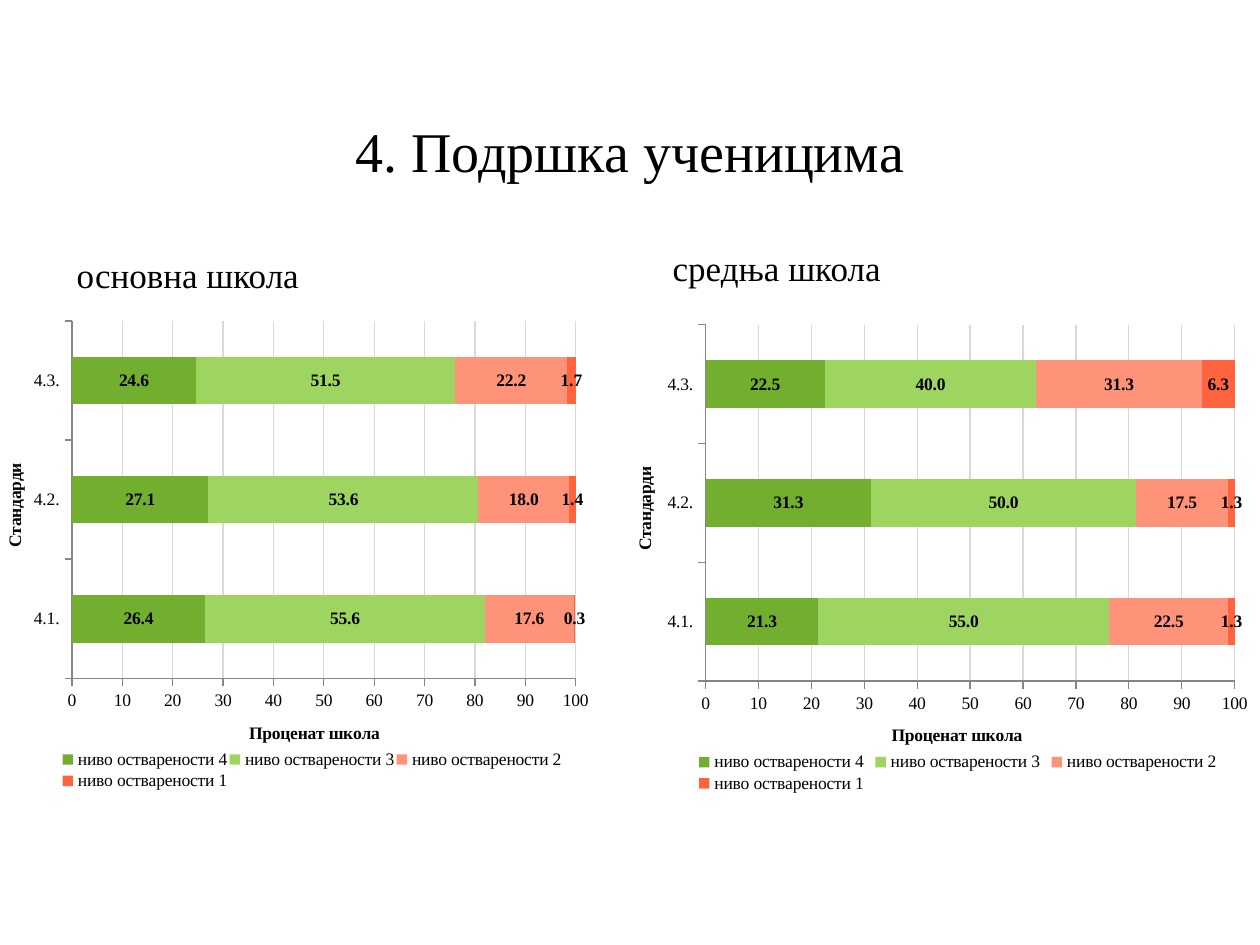
from lxml.etree import SubElement
from pptx import Presentation
from pptx.chart.data import CategoryChartData
from pptx.dml.color import RGBColor
from pptx.enum.chart import XL_CHART_TYPE, XL_LABEL_POSITION, XL_LEGEND_POSITION, XL_TICK_MARK
from pptx.enum.text import MSO_ANCHOR, PP_ALIGN
from pptx.oxml.ns import qn
from pptx.util import Inches, Pt

FONT = "Times New Roman"
BLACK = RGBColor(0x00, 0x00, 0x00)
GRID = RGBColor(0xD9, 0xD9, 0xD9)
AXIS = RGBColor(0x86, 0x86, 0x86)

TITLE = "4. Подршка ученицима"
STANDARDS = ["4.1.", "4.2.", "4.3."]
LEVELS = [
    ("ниво остварености 4", RGBColor(0x72, 0xAF, 0x2F)),
    ("ниво остварености 3", RGBColor(0x9E, 0xD5, 0x61)),
    ("ниво остварености 2", RGBColor(0xFF, 0x93, 0x79)),
    ("ниво остварености 1", RGBColor(0xFF, 0x64, 0x3F)),
]
SCHOOLS = [
    {
        "heading": "основна школа",
        "heading_at": (0.51, 1.96, 2.28, 0.44),
        "chart_at": (0, 2.39, 4.76, 3.94),
        "values": [(26.4, 27.1, 24.6), (55.6, 53.6, 51.5), (17.6, 18.0, 22.2), (0.3, 1.4, 1.7)],
    },
    {
        "heading": "средња школа",
        "heading_at": (5.24, 1.91, 2.28, 0.44),
        "chart_at": (5, 2.42, 5, 3.93),
        "values": [(21.3, 31.3, 22.5), (55.0, 50.0, 40.0), (22.5, 17.5, 31.3), (1.3, 1.3, 6.3)],
    },
]


def inches(lengths):
    return [Inches(length) for length in lengths]


def set_font(font, size, bold=False):
    font.name = FONT
    font.size = Pt(size)
    font.bold = bold
    font.color.rgb = BLACK


def set_layout(parent, x, y, width=None, height=None, inner=False):
    """Place a chart part by fractions of the chart area."""
    for old in parent.findall(qn("c:layout")):
        parent.remove(old)
    layout = SubElement(parent, qn("c:layout"))
    manual = SubElement(layout, qn("c:manualLayout"))
    settings = [("xMode", "edge"), ("yMode", "edge"), ("x", x), ("y", y), ("w", width), ("h", height)]
    if inner:
        settings.insert(0, ("layoutTarget", "inner"))
    for name, value in settings:
        if value is not None:
            SubElement(manual, qn(f"c:{name}")).set("val", str(value))
    overlay = parent.find(qn("c:overlay"))
    if overlay is None:
        parent.insert(0, layout)
    else:
        overlay.addprevious(layout)


def format_axis(axis, title, x, y):
    axis.major_tick_mark = XL_TICK_MARK.OUTSIDE
    axis.minor_tick_mark = XL_TICK_MARK.NONE
    axis.format.line.color.rgb = AXIS
    axis.format.line.width = Pt(0.75)
    set_font(axis.tick_labels.font, 10)
    frame = axis.axis_title.text_frame
    frame.text = title
    set_font(frame.paragraphs[0].runs[0].font, 10, bold=True)
    set_layout(axis.axis_title._element, x, y)


def add_levels_chart(slide, school):
    data = CategoryChartData(number_format="0.0")
    data.categories = STANDARDS
    for (name, _), values in zip(LEVELS, school["values"]):
        data.add_series(name, values)
    chart = slide.shapes.add_chart(
        XL_CHART_TYPE.BAR_STACKED, *inches(school["chart_at"]), data).chart
    chart.has_title = False
    set_font(chart.font, 10)

    plot = chart.plots[0]
    plot.gap_width = 150
    plot.overlap = 100
    plot.vary_by_categories = False
    for series, (_, color) in zip(plot.series, LEVELS):
        series.format.fill.solid()
        series.format.fill.fore_color.rgb = color
        labels = series.data_labels
        labels.show_value = True
        labels.number_format = "0.0"
        labels.number_format_is_linked = False
        labels.position = XL_LABEL_POSITION.CENTER
        set_font(labels.font, 10, bold=True)

    format_axis(chart.category_axis, "Стандарди", 0, 0.32)
    percent = chart.value_axis
    format_axis(percent, "Проценат школа", 0.41, 0.84)
    percent.minimum_scale = 0
    percent.maximum_scale = 100
    percent.major_unit = 10
    percent.tick_labels.number_format = "0"
    percent.tick_labels.number_format_is_linked = False
    percent.major_gridlines.format.line.color.rgb = GRID
    percent.major_gridlines.format.line.width = Pt(0.75)

    chart.has_legend = True
    chart.legend.position = XL_LEGEND_POSITION.RIGHT
    chart.legend.include_in_layout = False
    set_font(chart.legend.font, 10)
    set_layout(chart.legend._element, 0.1, 0.9, 0.84, 0.09)
    plot_area = chart._chartSpace.find(".//" + qn("c:plotArea"))
    set_layout(plot_area, 0.12, 0.04, 0.84, 0.72, inner=True)


def main():
    deck = Presentation()
    deck.slide_width, deck.slide_height = Inches(10), Inches(7.5)
    slide = deck.slides.add_slide(deck.slide_layouts[5])

    title = slide.shapes.title
    title.left, title.top, title.width, title.height = inches((0.5, 0.84, 9, 0.71))
    title.text_frame.text = TITLE
    title.text_frame.vertical_anchor = MSO_ANCHOR.MIDDLE
    para = title.text_frame.paragraphs[0]
    para.alignment = PP_ALIGN.CENTER
    set_font(para.runs[0].font, 32)

    for school in SCHOOLS:
        box = slide.shapes.add_textbox(*inches(school["heading_at"]))
        box.text_frame.word_wrap = True
        box.text_frame.text = school["heading"]
        set_font(box.text_frame.paragraphs[0].runs[0].font, 20)
        add_levels_chart(slide, school)

    deck.save("out.pptx")


if __name__ == "__main__":
    main()
